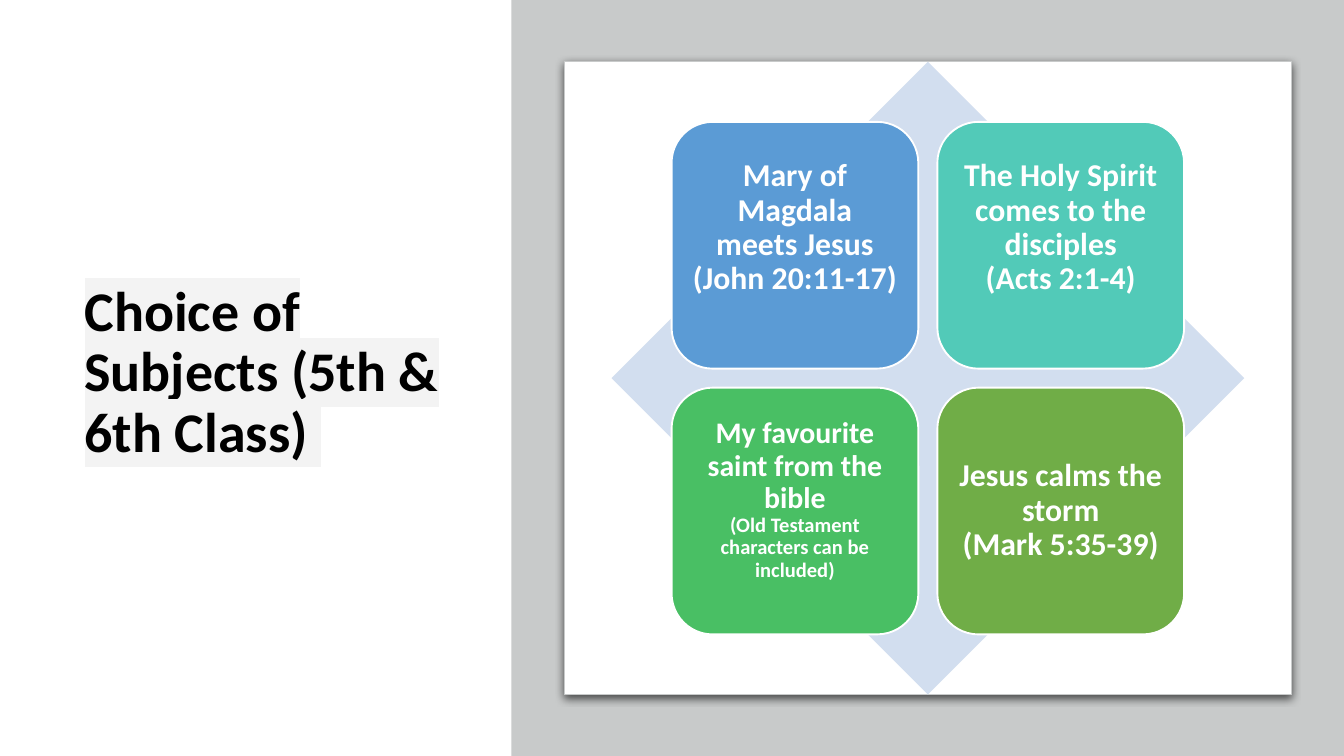
from lxml import etree
from pptx import Presentation
from pptx.dml.color import RGBColor
from pptx.enum.shapes import MSO_SHAPE
from pptx.enum.text import MSO_ANCHOR, PP_ALIGN
from pptx.oxml.ns import qn
from pptx.util import Pt

RECTANGLE, DIAMOND = MSO_SHAPE.RECTANGLE, MSO_SHAPE.DIAMOND
ROUNDED = MSO_SHAPE.ROUNDED_RECTANGLE
LEFT, CENTER = PP_ALIGN.LEFT, PP_ALIGN.CENTER
MIDDLE = MSO_ANCHOR.MIDDLE

BLACK = RGBColor(0x00, 0x00, 0x00)
WHITE = RGBColor(0xFF, 0xFF, 0xFF)
GREY = RGBColor(0xC8, 0xCA, 0xCA)
PALE_GREY = RGBColor(0xF3, 0xF3, 0xF3)
PALE_BLUE = RGBColor(0xD2, 0xDE, 0xEF)
BLUE = RGBColor(0x5B, 0x9B, 0xD5)
TEAL = RGBColor(0x52, 0xCA, 0xB8)
GREEN = RGBColor(0x49, 0xBF, 0x64)
OLIVE = RGBColor(0x70, 0xAD, 0x47)

FONT = "Calibri"
SLIDE_WIDTH, SLIDE_HEIGHT = 720, 405
DIAMOND_LEFT, DIAMOND_TOP, DIAMOND_SIZE = 327.6, 33.1, 339
CARD_SIZE = 0.39 * DIAMOND_SIZE
CARD_OFFSET = 0.095 * DIAMOND_SIZE
CARD_STEP = DIAMOND_SIZE - 2 * CARD_OFFSET - CARD_SIZE
CARD_INSET = 5

# Fill, lines as (text, size), extra space below the text
SUBJECTS = [
    (BLUE, [("Mary of Magdala", 17), ("meets Jesus (John 20:11-17)", 17)], 18.5),
    (TEAL, [("The Holy Spirit comes to the disciples", 17), ("(Acts 2:1-4)", 17)], 18.5),
    (GREEN, [("My favourite saint from the bible", 16),
             ("(Old Testament characters can be included)", 11)], 12),
    (OLIVE, [("Jesus calms the storm", 17), ("(Mark 5:35-39)", 17)], 0),
]


def add_panel(shapes, kind, left, top, width, height, fill, line=None, line_width=1):
    panel = shapes.add_shape(kind, Pt(left), Pt(top), Pt(width), Pt(height))
    panel.shadow.inherit = False
    panel.fill.solid()
    panel.fill.fore_color.rgb = fill
    if line is None:
        panel.line.fill.background()
    else:
        panel.line.color.rgb = line
        panel.line.width = Pt(line_width)
    return panel


def add_drop_shadow(panel):
    effects = panel._element.spPr.find(qn("a:effectLst"))
    shadow = etree.SubElement(effects, qn("a:outerShdw"), blurRad=str(Pt(4.5)),
                              dist=str(Pt(1.5)), dir="5400000", algn="t", rotWithShape="0")
    color = etree.SubElement(shadow, qn("a:srgbClr"), val=str(BLACK))
    etree.SubElement(color, qn("a:alpha"), val="63000")


def write_line(paragraph, text, size, color=WHITE, align=CENTER, highlight=None):
    paragraph.alignment = align
    paragraph.line_spacing = 0.9
    run = paragraph.add_run()
    run.text = text
    run.font.size = Pt(size)
    run.font.bold = True
    run.font.color.rgb = color
    run.font.name = FONT
    if highlight is not None:
        mark = etree.Element(qn("a:highlight"))
        etree.SubElement(mark, qn("a:srgbClr"), val=str(highlight))
        run.font._element.find(qn("a:solidFill")).addnext(mark)


def add_title(shapes):
    title = shapes.add_textbox(Pt(38.2), Pt(37.4), Pt(216.7), Pt(325.4))
    frame = title.text_frame
    frame.word_wrap = True
    frame.vertical_anchor = MIDDLE
    write_line(frame.paragraphs[0], "Choice of Subjects (5th & 6th Class) ", 30,
               color=BLACK, align=LEFT, highlight=PALE_GREY)


def add_subject_card(shapes, index, fill, lines, space_below):
    row, column = divmod(index, 2)
    card = add_panel(shapes, ROUNDED,
                     DIAMOND_LEFT + CARD_OFFSET + column * CARD_STEP,
                     DIAMOND_TOP + CARD_OFFSET + row * CARD_STEP,
                     CARD_SIZE, CARD_SIZE, fill, line=WHITE)
    frame = card.text_frame
    frame.word_wrap = True
    frame.vertical_anchor = MIDDLE
    frame.margin_left = frame.margin_right = frame.margin_top = Pt(CARD_INSET)
    frame.margin_bottom = Pt(CARD_INSET + space_below)
    for number, (text, size) in enumerate(lines):
        paragraph = frame.add_paragraph() if number else frame.paragraphs[0]
        write_line(paragraph, text, size)


def main():
    deck = Presentation()
    deck.slide_width, deck.slide_height = Pt(SLIDE_WIDTH), Pt(SLIDE_HEIGHT)
    slide = deck.slides.add_slide(deck.slide_layouts[6])

    # Title on the left
    add_title(slide.shapes)

    # Grey side with a raised white sheet
    add_panel(slide.shapes, RECTANGLE, 274, 0, SLIDE_WIDTH - 274, SLIDE_HEIGHT, GREY)
    sheet = add_panel(slide.shapes, ROUNDED, 302.4, 33.1, 389.5, 339, WHITE,
                      line=GREY, line_width=0.75)
    sheet.adjustments[0] = 0
    add_drop_shadow(sheet)

    # Diamond with the four subjects
    matrix = slide.shapes.add_group_shape().shapes
    add_panel(matrix, DIAMOND, DIAMOND_LEFT, DIAMOND_TOP,
              DIAMOND_SIZE, DIAMOND_SIZE, PALE_BLUE)
    for index, (fill, lines, space_below) in enumerate(SUBJECTS):
        add_subject_card(matrix, index, fill, lines, space_below)

    deck.save("out.pptx")


if __name__ == "__main__":
    main()
